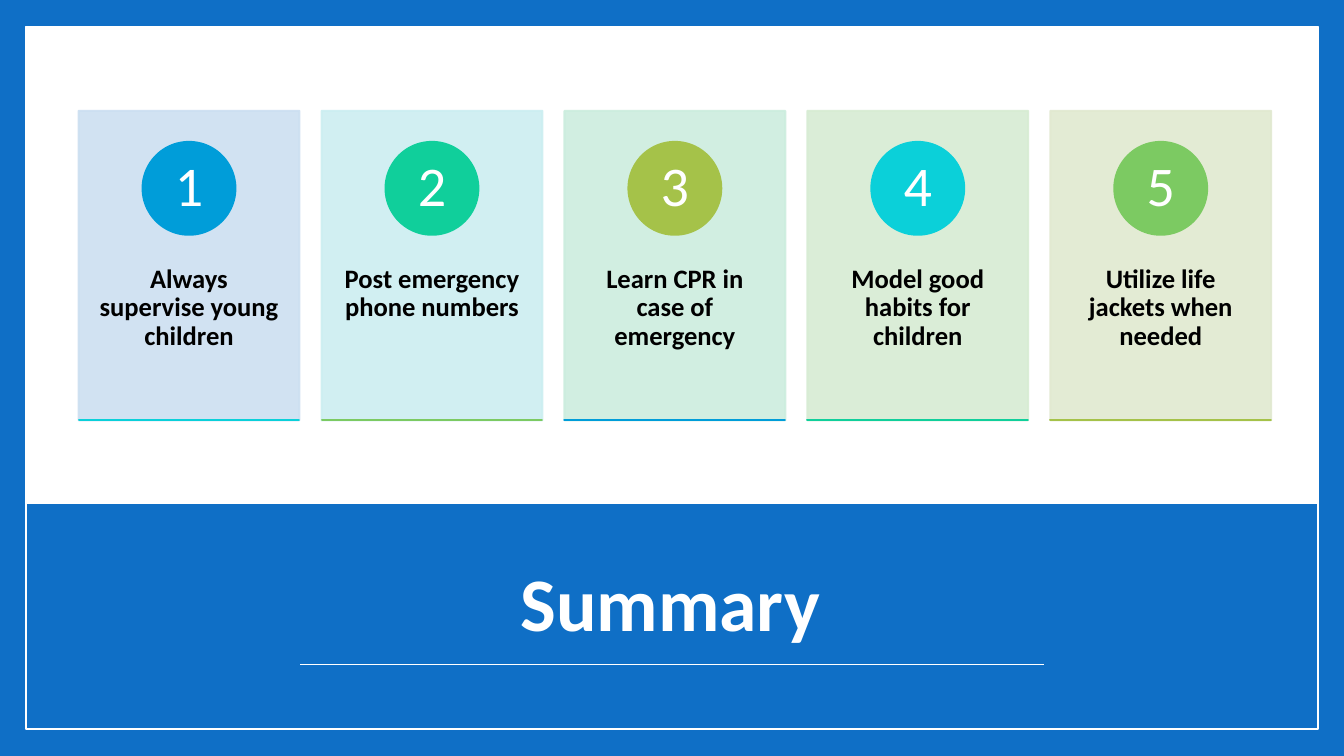
from lxml.etree import SubElement
from pptx import Presentation
from pptx.dml.color import RGBColor
from pptx.enum.shapes import MSO_CONNECTOR, MSO_SHAPE
from pptx.enum.text import MSO_ANCHOR, MSO_AUTO_SIZE, PP_ALIGN
from pptx.oxml.ns import qn
from pptx.util import Pt

BLUE = RGBColor(0x0F, 0x6F, 0xC6)
WHITE = RGBColor(0xFF, 0xFF, 0xFF)
BLACK = RGBColor(0x00, 0x00, 0x00)
SKY = RGBColor(0x00, 0x9D, 0xD9)
CYAN = RGBColor(0x0B, 0xD0, 0xD9)
MINT = RGBColor(0x10, 0xCF, 0x9B)
GREEN = RGBColor(0x7C, 0xCA, 0x62)
OLIVE = RGBColor(0xA5, 0xC2, 0x49)
PALE_BLUE = RGBColor(0xCC, 0xDF, 0xF1)
PALE_CYAN = RGBColor(0xCC, 0xEE, 0xF1)
PALE_MINT = RGBColor(0xCC, 0xED, 0xDE)
PALE_GREEN = RGBColor(0xD7, 0xEC, 0xD3)
PALE_OLIVE = RGBColor(0xE1, 0xE9, 0xD0)

# Message, card colour, circle colour, bottom bar colour
CARDS = [
    ("Always supervise young children", PALE_BLUE, SKY, CYAN),
    ("Post emergency phone numbers", PALE_CYAN, MINT, GREEN),
    ("Learn CPR in case of emergency", PALE_MINT, OLIVE, SKY),
    ("Model good habits for children", PALE_GREEN, CYAN, MINT),
    ("Utilize life jackets when needed", PALE_OLIVE, GREEN, OLIVE),
]
CARD_LEFT, CARD_TOP, CARD_WIDTH, CARD_HEIGHT = 56.16, 79.2, 157.68, 221.04
CARD_STEP = 173.52
CIRCLE_SIZE, NUMBER_SIZE = 66.24, 46.8


def add_block(kind, left, top, width, height, fill=None, line=None, line_width=1.5):
    block = page.shapes.add_shape(kind, Pt(left), Pt(top), Pt(width), Pt(height))
    block.shadow.inherit = False
    if fill is None:
        block.fill.background()
    else:
        block.fill.solid()
        block.fill.fore_color.rgb = fill
    if line is None:
        block.line.fill.background()
    else:
        block.line.color.rgb = line
        block.line.width = Pt(line_width)
    return block


def write_text(box, text, size, color, bold, anchor, side=7.2, edge=3.6):
    frame = box.text_frame
    frame.text = text
    frame.word_wrap = True
    frame.auto_size = MSO_AUTO_SIZE.NONE
    frame.vertical_anchor = anchor
    frame.margin_left = frame.margin_right = Pt(side)
    frame.margin_top = frame.margin_bottom = Pt(edge)
    paragraph = frame.paragraphs[0]
    paragraph.alignment = PP_ALIGN.CENTER
    paragraph.line_spacing = 0.9
    font = paragraph.runs[0].font
    font.name = "Calibri"
    font.size = Pt(size)
    font.bold = bold
    font.color.rgb = color


deck = Presentation()
deck.slide_width, deck.slide_height = Pt(960), Pt(540)
page = deck.slides.add_slide(deck.slide_layouts[5])
page.background.fill.solid()
page.background.fill.fore_color.rgb = BLUE

# White panel and blue title band
add_block(MSO_SHAPE.RECTANGLE, 18, 19.2, 923, 501.8, fill=WHITE)
add_block(MSO_SHAPE.RECTANGLE, 18, 360, 923, 161.2, fill=BLUE)

# Title, raised above the band
title = page.shapes.title
title.left, title.top, title.width, title.height = Pt(90), Pt(380.2), Pt(777.6), Pt(106.6)
write_text(title, "Summary", 54, WHITE, True, MSO_ANCHOR.MIDDLE)
page.shapes._spTree.append(title._element)

# Thin white frame
add_block(MSO_SHAPE.RECTANGLE, 18.5, 18.9, 923, 501.8, line=WHITE, line_width=1)

# Numbered cards
for index, (message, card_color, circle_color, bar_color) in enumerate(CARDS):
    left = CARD_LEFT + index * CARD_STEP
    card = add_block(MSO_SHAPE.RECTANGLE, left, CARD_TOP, CARD_WIDTH, CARD_HEIGHT,
                     fill=card_color, line=card_color)
    for color in card._element.spPr.iter(qn("a:srgbClr")):
        SubElement(color, qn("a:alpha"), val="90000")

    message_box = page.shapes.add_textbox(Pt(left), Pt(163.6), Pt(CARD_WIDTH), Pt(132.6))
    write_text(message_box, message, 19, BLACK, True, MSO_ANCHOR.TOP, 12.24, 25.92)

    add_block(MSO_SHAPE.OVAL, left + (CARD_WIDTH - CIRCLE_SIZE) / 2, 101.4,
              CIRCLE_SIZE, CIRCLE_SIZE, fill=circle_color, line=circle_color)
    number_box = page.shapes.add_textbox(Pt(left + (CARD_WIDTH - NUMBER_SIZE) / 2), Pt(111.3),
                                         Pt(NUMBER_SIZE), Pt(NUMBER_SIZE))
    write_text(number_box, str(index + 1), 40, WHITE, False, MSO_ANCHOR.MIDDLE, 5.04, 0.72)

    add_block(MSO_SHAPE.RECTANGLE, left, CARD_TOP + CARD_HEIGHT, CARD_WIDTH, 0.01,
              fill=bar_color, line=bar_color)

# Rule under the title
rule = page.shapes.add_connector(MSO_CONNECTOR.STRAIGHT, Pt(214.4), Pt(474.5), Pt(745.8), Pt(474.5))
rule.line.color.rgb = WHITE
rule.line.width = Pt(0.79)
SubElement(rule._element.spPr, qn("a:effectLst"))

deck.save("out.pptx")
